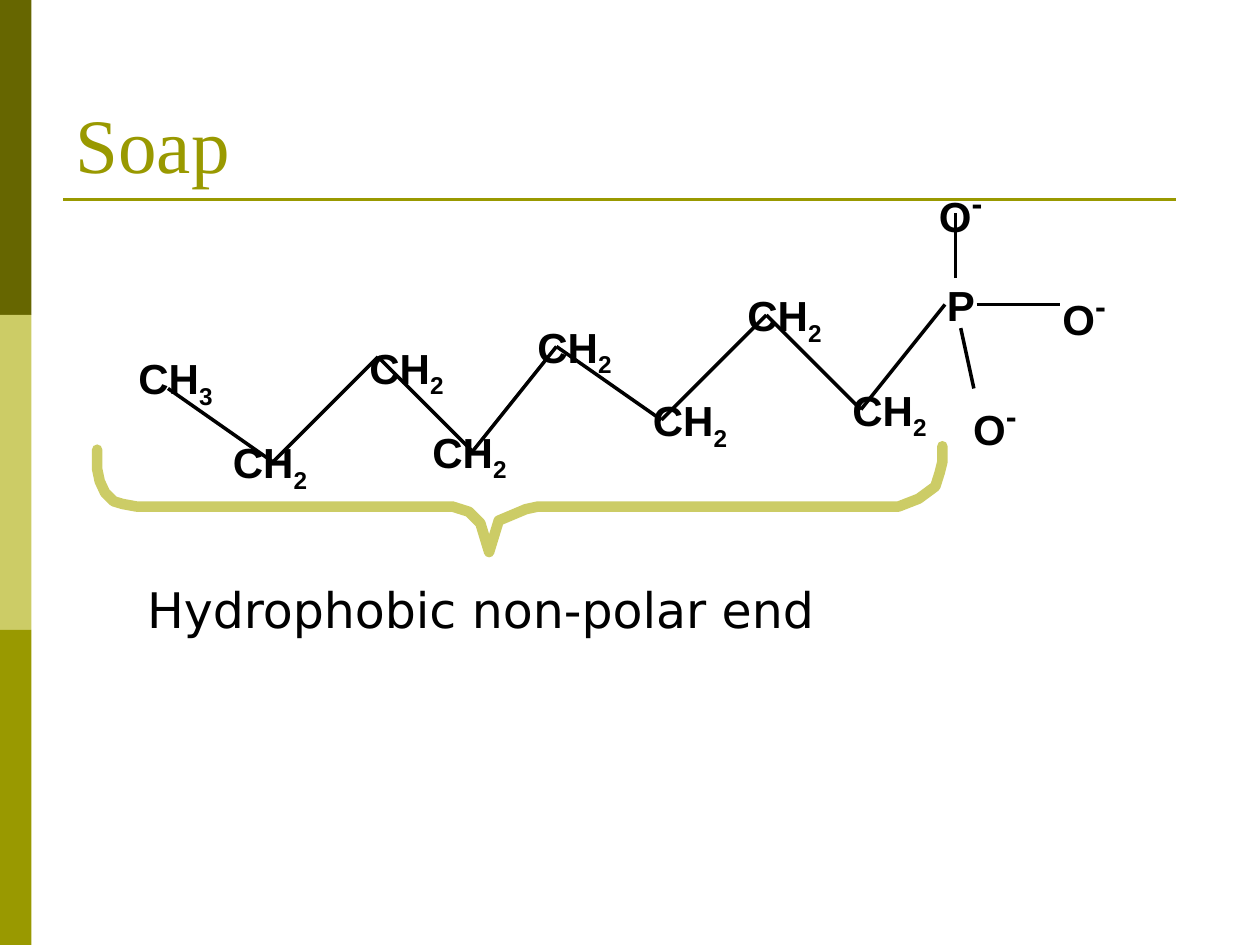
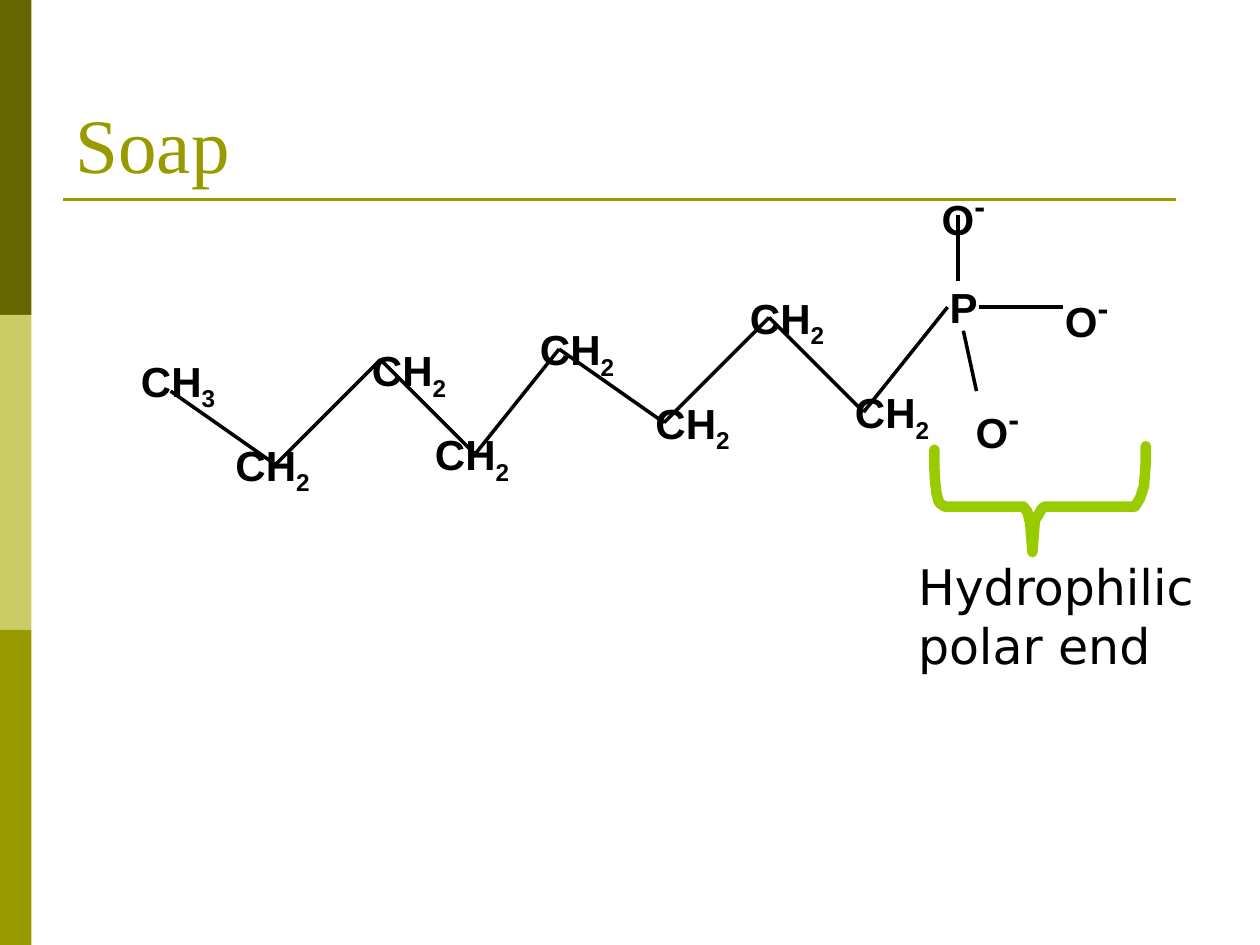
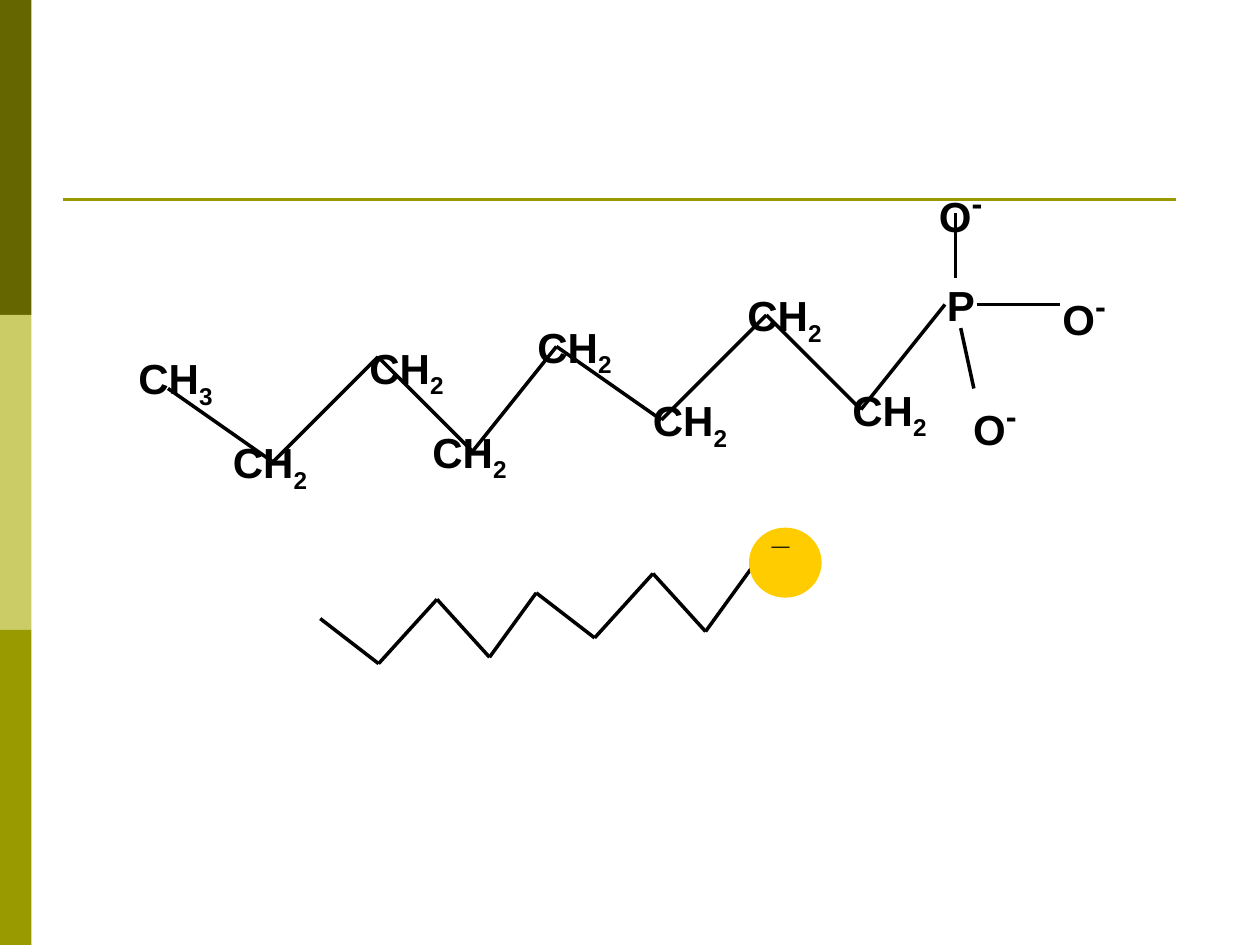
from lxml.etree import SubElement
from pptx import Presentation
from pptx.dml.color import RGBColor
from pptx.enum.shapes import MSO_CONNECTOR, MSO_SHAPE
from pptx.enum.text import MSO_ANCHOR, MSO_AUTO_SIZE, PP_ALIGN
from pptx.oxml.ns import qn
from pptx.util import Pt

color = RGBColor.from_string
DARK_OLIVE, LIGHT_OLIVE, OLIVE = "666600", "CCCC66", "999900"
LIME, YELLOW, BLACK = "99CC00", "FFCC00", "000000"

# Carbon chain corners, from the CH3 end to the phosphate head
CHAIN = [(96, 222), (156, 264), (216, 204), (270, 258), (318, 198),
         (378, 240), (438, 180), (492, 234), (540, 174)]
HEAD_BONDS = [((558, 174), (606, 174)), ((546, 159), (546, 121.5)),
              ((549, 187.5), (556.5, 222))]

# Atom labels: left, top, width, symbol, index, index size, baseline shift
CH2_PLACES = [(126, 246), (240, 240), (204, 192), (300, 180),
              (366, 222), (420, 162), (480, 216)]
OXYGEN_PLACES = [(600, 156), (529.5, 97.5), (549, 219)]
ATOMS = [(534, 156, 24, "P", "", 24, 0), (72, 198, 66, "CH", "3", 24, -25000)]
ATOMS += [(left, top, 72, "CH", "2", 24, -25000) for left, top in CH2_PLACES]
ATOMS += [(left, top, 78, "O", "-", 32, 30000) for left, top in OXYGEN_PLACES]

# Brace outline: distance from its left end, height on the slide
BRACE = [(0, 257), (0, 268), (1.5, 275), (4.5, 281.5), (9.5, 286.5), (14.5, 288),
         (22.5, 289.5), (203, 289.5), (212.5, 292.5), (219, 299), (224, 315.5),
         (229.5, 297.5), (245, 291), (252, 289.5), (458, 289.5), (469.5, 285),
         (479, 278), (481.5, 270), (483, 264), (483, 255)]


def add_line(shapes, start, end, line_color=BLACK, width=2):
    line = shapes.add_connector(MSO_CONNECTOR.STRAIGHT, *map(Pt, start + end))
    line.line.color.rgb = color(line_color)
    line.line.width = Pt(width)
    SubElement(line.element.spPr, qn("a:effectLst"))
    return line


def add_text(shapes, box, text, font_name, size, bold=False):
    text_box = shapes.add_textbox(*map(Pt, box))
    text_frame = text_box.text_frame
    text_frame.word_wrap = True
    text_frame.text = text
    font = text_frame.paragraphs[0].runs[0].font
    font.name, font.size, font.bold = font_name, Pt(size), bold
    font.color.rgb = color(BLACK)
    return text_frame


presentation = Presentation()
presentation.slide_width, presentation.slide_height = Pt(720), Pt(540)
title_only, blank = presentation.slide_layouts[5], presentation.slide_layouts[6]
slides = [presentation.slides.add_slide(layout)
          for layout in (title_only, title_only, blank)]

# Side bands and title rule, moved to the master
decorations = []
for index, band_color in enumerate((DARK_OLIVE, LIGHT_OLIVE, OLIVE)):
    band = slides[0].shapes.add_shape(
        MSO_SHAPE.RECTANGLE, 0, Pt(180 * index), Pt(18), Pt(180))
    band.shadow.inherit = False
    band.fill.solid()
    band.fill.fore_color.rgb = color(band_color)
    band.line.fill.background()
    decorations.append(band)
decorations.append(add_line(slides[0].shapes, (36, 114), (672, 114), OLIVE, 1.5))
for shape_id, decoration in enumerate(decorations, start=101):
    decoration.element.xpath("./*/p:cNvPr")[0].set("id", str(shape_id))
    presentation.slide_master.element.cSld.spTree.append(decoration.element)

# Titles, braces and captions
braced_slides = [
    (55.5, 1, LIGHT_OLIVE, "Hydrophobic non-polar end", (77, 327.5, 427, 43)),
    (534, 0.25, LIME, "Hydrophilic polar end", (517.5, 314.5, 184.5, 93)),
]
for slide, (left, stretch, brace_color, caption, box) in zip(slides, braced_slides):
    title = slide.shapes.title
    title.left, title.top, title.width, title.height = map(Pt, (36, 21.5, 648, 90))
    title.text_frame.text = "Soap"
    title.text_frame.auto_size = MSO_AUTO_SIZE.NONE
    title.text_frame.vertical_anchor = MSO_ANCHOR.BOTTOM
    paragraph = title.text_frame.paragraphs[0]
    paragraph.alignment = PP_ALIGN.LEFT
    font = paragraph.runs[0].font
    font.name, font.size = "Times New Roman", Pt(44)
    font.color.rgb = color(OLIVE)

    points = [(Pt(left + stretch * x), Pt(y)) for x, y in BRACE]
    builder = slide.shapes.build_freeform(*points[0])
    builder.add_line_segments(points[1:], close=False)
    brace = builder.convert_to_shape()
    brace.shadow.inherit = False
    brace.fill.background()
    brace.line.color.rgb = color(brace_color)
    brace.line.width = Pt(6)
    brace.element.spPr.find(qn("a:ln")).set("cap", "rnd")

    add_text(slide.shapes, box, caption, "DejaVu Sans", 28)

# Soap molecule on every slide
for slide, shift in zip(slides, (0, 1.5, 0)):
    molecule = slide.shapes.add_group_shape()
    for start, end in list(zip(CHAIN, CHAIN[1:])) + HEAD_BONDS:
        add_line(molecule.shapes, start, end)
    for left, top, width, symbol, index, index_size, baseline in ATOMS:
        text_frame = add_text(
            molecule.shapes, (left, top, width, 36), symbol, "Arial", 24, True)
        text_frame.auto_size = MSO_AUTO_SIZE.SHAPE_TO_FIT_TEXT
        if index:
            run = text_frame.paragraphs[0].add_run()
            run.text = index
            run.font.name, run.font.size, run.font.bold = "Arial", Pt(index_size), True
            run.font.color.rgb = color(BLACK)
            run.font._element.set("baseline", str(baseline))
    molecule.left += Pt(shift)
    molecule.top += Pt(shift)

# Simplified molecule: the same chain, smaller, with a charged head
shapes = slides[2].shapes
small_chain = [(183 + 0.556 * (x - 96), 353.5 + 0.613 * (y - 222)) for x, y in CHAIN]
for start, end in zip(small_chain, small_chain[1:]):
    add_line(shapes, start, end)
head = shapes.add_shape(MSO_SHAPE.OVAL, Pt(429), Pt(302.5), Pt(39.5), Pt(38))
head.shadow.inherit = False
head.fill.solid()
head.fill.fore_color.rgb = color(YELLOW)
head.line.color.rgb = color(YELLOW)
head.line.width = Pt(2)
charge = add_text(shapes, (434, 289.5, 31.5, 41), "_", "Arial", 18, True)
charge.auto_size = MSO_AUTO_SIZE.SHAPE_TO_FIT_TEXT

presentation.save("out.pptx")
